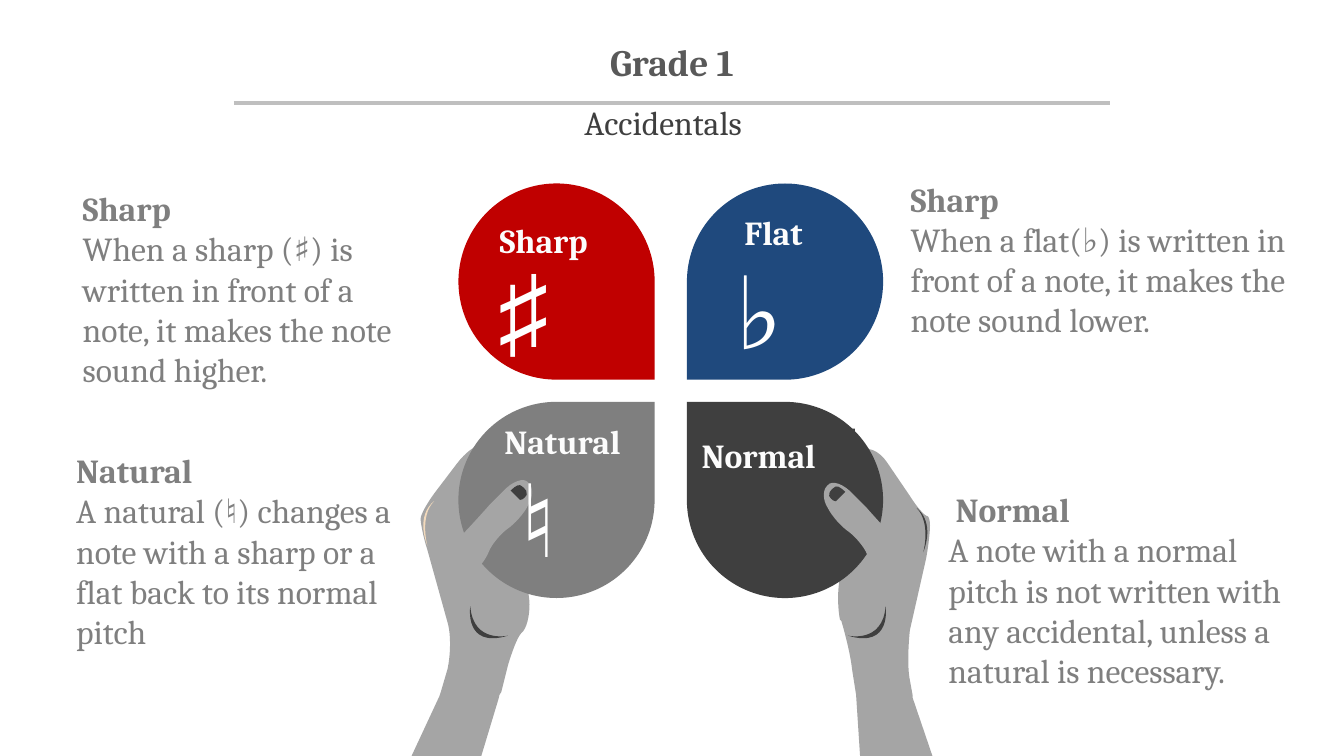
from dataclasses import dataclass

from lxml.etree import SubElement
from pptx import Presentation
from pptx.dml.color import RGBColor
from pptx.enum.shapes import MSO_CONNECTOR, MSO_SHAPE
from pptx.enum.text import MSO_ANCHOR, MSO_AUTO_SIZE, PP_ALIGN
from pptx.oxml.ns import qn
from pptx.oxml.xmlchemy import OxmlElement
from pptx.util import Pt


@dataclass(frozen=True)
class Theme:
    font: str = "Cambria"
    symbol_font: str = "Arial"
    title_size: int = 20
    body_size: int = 18
    symbol_size: int = 54
    title: str = "595959"
    rule: str = "BFBFBF"
    note: str = "7F7F7F"
    label: str = "FCFCFC"
    symbol: str = "FFFFFF"
    skin: str = "A5A5A5"
    dark: str = "3F3F3F"
    shine: str = "F3DABC"
    red: str = "C00000"
    blue: str = "1F497D"


@dataclass(frozen=True)
class Area:
    left: float
    top: float
    width: float
    height: float

    def lengths(self) -> list:
        return [Pt(v) for v in (self.left, self.top, self.width, self.height)]


@dataclass(frozen=True)
class Petal:
    label: str
    label_area: Area
    left: float
    top: float
    rotation: int
    color: str
    label_filled: bool = True


@dataclass(frozen=True)
class Symbol:
    text: str
    area: Area


@dataclass(frozen=True)
class Note:
    heading: str
    body: str
    area: Area


@dataclass(frozen=True)
class Outline:
    """A start point, then lines (x, y) and cubic curves (six numbers)."""
    start: tuple
    segments: tuple

    def mirrored(self, axis_sum: float, rise: float) -> "Outline":
        def flip(values: tuple) -> tuple:
            return tuple(v - rise if i % 2 else axis_sum - v for i, v in enumerate(values))
        return Outline(flip(self.start), tuple(flip(s) for s in self.segments))


THEME = Theme()
GRID = 0.72  # points per unit of the hand outlines
PETAL_SIZE = 105.1
LEFT, RIGHT, UPPER, LOWER = 245.6, 368, 98.3, 215.3

PETALS = [
    Petal("Sharp", Area(260.6, 114.5, 75, 28.8), LEFT, UPPER, 90, THEME.red),
    Petal("Flat", Area(391.7, 110.2, 57, 28.8), RIGHT, UPPER, 180, THEME.blue),
    Petal("Normal", Area(368.8, 229.7, 89.3, 28.8), RIGHT, LOWER, 270, THEME.dark),
    Petal("Natural", Area(263.1, 221.8, 98, 28.8), LEFT, LOWER, 0, THEME.note, False),
]
SYMBOLS = [
    Symbol("♯", Area(260, 128.5, 68.4, 72.7)),
    Symbol("♭", Area(386.9, 129.6, 70.6, 72.7)),
    Symbol("♮", Area(271.8, 241.2, 72, 72.7)),
]
NOTES = [
    Note("Sharp", "When a sharp (♯) is written in front of a note, it makes the note sound higher.",
         Area(38.9, 98, 193, 123.8)),
    Note("Sharp", "When a flat(♭) is written in front of a note, it makes the note sound lower.",
         Area(482.4, 92.9, 215.3, 128.9)),
    Note("Natural", "A natural (♮) changes a note with a sharp or a flat back to its normal pitch",
         Area(35.4, 238.3, 195.8, 118)),
    Note(" Normal", "A note with a normal pitch is not written with any accidental, "
         "unless a natural is necessary.", Area(502.6, 259.2, 205.6, 118.8)),
]

RIGHT_PALM = Outline((679, 519), (
    (679, 518, 679, 517, 679, 517), (677, 506), (675, 496, 676, 479, 677, 469), (689, 416),
    (691, 406, 692, 395, 692, 391), (692, 387, 691, 384, 690, 384),
    (688, 384, 682, 377, 677, 369), (660, 344), (654, 335, 645, 332, 640, 335),
    (634, 339, 631, 350, 633, 360), (635, 368), (637, 378, 636, 394, 633, 403),
    (626, 426), (623, 435, 623, 451, 625, 461), (626, 462),
    (629, 472, 633, 488, 634, 498), (637, 517), (640, 563), (694, 563)))
LEFT_PALM = Outline((388, 423), (
    (384, 415, 379, 404, 377, 396), (374, 390, 367, 380, 361, 375),
    (355, 370, 353, 362, 357, 356), (361, 350, 364, 342, 364, 338),
    (364, 334, 361, 331, 358, 331), (354, 331, 346, 337, 340, 345), (324, 366),
    (318, 374, 313, 383, 313, 386), (313, 389, 315, 400, 318, 409), (333, 463),
    (336, 473, 335, 489, 333, 498), (328, 515), (328, 516, 327, 517, 327, 518),
    (306, 563), (358, 563), (371, 520), (371, 518, 372, 516, 373, 515), (378, 495),
    (381, 485, 385, 474, 388, 471), (392, 468, 394, 458, 394, 450),
    (394, 442, 391, 430, 388, 423)))
KNUCKLE = Outline((682, 378), ((682, 378, 696, 387, 687, 411), (687, 411, 693, 389, 682, 378)))
WRIST = Outline((631, 473), ((631, 473, 657, 479, 659, 451), (659, 451, 664, 483, 631, 473)))
THUMB = Outline((673, 425), (
    (679, 422, 678, 413, 671, 406), (670, 405), (663, 398, 652, 386, 645, 378),
    (635, 368), (628, 360, 619, 357, 616, 361), (612, 364, 612, 372, 616, 378),
    (619, 384, 626, 392, 632, 396), (637, 400, 643, 407, 645, 412),
    (647, 417, 651, 423, 655, 426), (659, 429, 667, 429, 673, 425)))
NAIL = Outline((622, 362), (
    (622, 362, 616, 365, 617, 369), (617, 369, 619, 373, 622, 373),
    (629, 366), (629, 366, 624, 361, 622, 362)))


def add_span(para, text: str, size: int, color: str, bold=False, font=THEME.font) -> None:
    span = para.add_run()
    span.text = text
    span.font.name, span.font.size, span.font.bold = font, Pt(size), bold
    span.font.color.rgb = RGBColor.from_string(color)


def set_margins(frame, side: float, end: float) -> None:
    frame.margin_left = frame.margin_right = Pt(side)
    frame.margin_top = frame.margin_bottom = Pt(end)


def add_box(page, area: Area, side=7.2, end=3.6):
    frame = page.shapes.add_textbox(*area.lengths()).text_frame
    frame.word_wrap = True
    set_margins(frame, side, end)
    return frame


def paint(shape, color: str) -> None:
    shape.shadow.inherit = False
    shape.fill.solid()
    shape.fill.fore_color.rgb = RGBColor.from_string(color)
    shape.line.fill.background()


def draw_outline(page, outline: Outline, color: str) -> None:
    points = [(Pt(segment[i] * GRID), Pt(segment[i + 1] * GRID))
              for segment in outline.segments for i in range(0, len(segment), 2)]
    builder = page.shapes.build_freeform(*(Pt(v * GRID) for v in outline.start))
    builder.add_line_segments(points, close=True)
    shape = builder.convert_to_shape()
    paint(shape, color)

    # Join each run of three control points into one cubic curve
    lines = iter(list(shape._element.spPr.iter(qn("a:lnTo"))))
    for segment in outline.segments:
        group = [next(lines) for _ in range(len(segment) // 2)]
        if len(group) == 3:
            curve = OxmlElement("a:cubicBezTo")
            group[0].addprevious(curve)
            for line in group:
                curve.append(line[0])
                line.getparent().remove(line)


def draw_petal(page, petal: Petal) -> None:
    area = Area(petal.left, petal.top, PETAL_SIZE, PETAL_SIZE)
    shape = page.shapes.add_shape(MSO_SHAPE.TEAR, *area.lengths())
    shape.rotation = petal.rotation
    paint(shape, petal.color)
    if petal.label_filled:
        label = page.shapes.add_shape(MSO_SHAPE.RECTANGLE, *petal.label_area.lengths())
        paint(label, petal.color)
        frame = label.text_frame
        frame.word_wrap = True
        frame.vertical_anchor = MSO_ANCHOR.TOP
    else:
        frame = add_box(page, petal.label_area)
    para = frame.paragraphs[0]
    para.alignment = PP_ALIGN.LEFT
    add_span(para, petal.label, THEME.body_size, THEME.label, bold=True)


def draw_note(page, note: Note) -> None:
    para = add_box(page, note.area, 5.4, 2.7).paragraphs[0]
    add_span(para, note.heading, THEME.body_size, THEME.note, bold=True)
    para.add_line_break()
    add_span(para, note.body, THEME.body_size, THEME.note)


def draw_header(page) -> None:
    title = page.shapes.title
    title.left, title.top, title.width, title.height = Area(293, 18, 134, 29.5).lengths()
    frame = title.text_frame
    frame.vertical_anchor = MSO_ANCHOR.MIDDLE
    set_margins(frame, 5.4, 2.7)
    para = frame.paragraphs[0]
    para.alignment = PP_ALIGN.CENTER
    add_span(para, "Grade 1", THEME.title_size, THEME.title, bold=True)

    rule = page.shapes.add_connector(MSO_CONNECTOR.STRAIGHT, Pt(125.3), Pt(55.2), Pt(594.7), Pt(55.2))
    rule.line.color.rgb = RGBColor.from_string(THEME.rule)
    rule.line.width = Pt(2.25)
    SubElement(rule._element.spPr, qn("a:effectLst"))

    para = add_box(page, Area(253.4, 51.1, 203.8, 28.8)).paragraphs[0]
    para.alignment = PP_ALIGN.CENTER
    add_span(para, "Accidentals", THEME.body_size, THEME.dark)


def main() -> None:
    deck = Presentation()
    deck.slide_width, deck.slide_height = Pt(720), Pt(405)
    page = deck.slides.add_slide(deck.slide_layouts[5])
    draw_header(page)

    # Palms lie behind the petals, thumbs in front
    for palm in (RIGHT_PALM, LEFT_PALM):
        draw_outline(page, palm, THEME.skin)
    for petal in PETALS:
        draw_petal(page, petal)
    for outline, color, mirror_color, axis_sum, rise in (
            (KNUCKLE, THEME.dark, THEME.shine, 1005, 5),
            (WRIST, THEME.dark, THEME.dark, 1009, 0),
            (THUMB, THEME.skin, THEME.skin, 1009, 2),
            (NAIL, THEME.dark, THEME.dark, 1009, 1)):
        draw_outline(page, outline, color)
        draw_outline(page, outline.mirrored(axis_sum, rise), mirror_color)

    # Explanations and music symbols
    for note in NOTES:
        draw_note(page, note)
    for symbol in SYMBOLS:
        frame = add_box(page, symbol.area)
        frame.auto_size = MSO_AUTO_SIZE.SHAPE_TO_FIT_TEXT
        add_span(frame.paragraphs[0], symbol.text, THEME.symbol_size, THEME.symbol,
                 font=THEME.symbol_font)
    deck.save("out.pptx")


if __name__ == "__main__":
    main()
